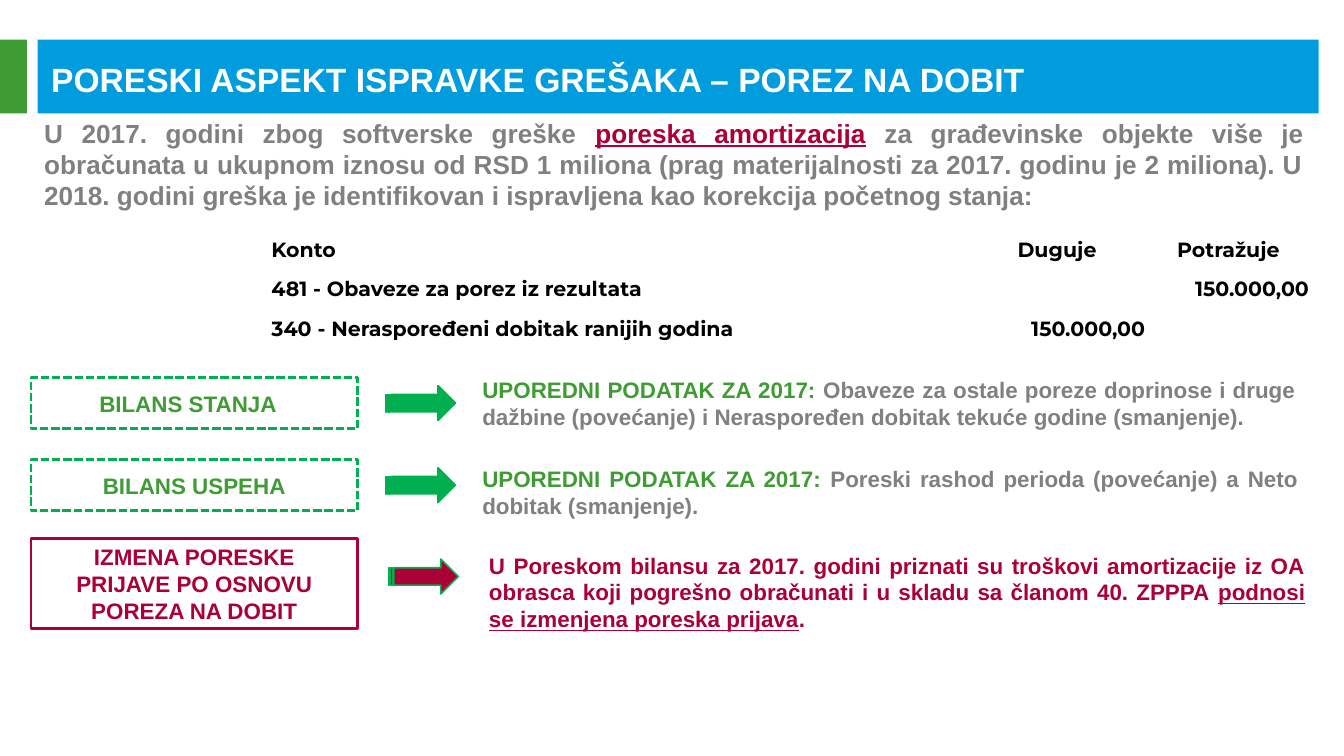
from dataclasses import dataclass
from typing import NamedTuple

from pptx import Presentation
from pptx.dml.color import RGBColor
from pptx.enum.dml import MSO_LINE
from pptx.enum.shapes import MSO_SHAPE
from pptx.enum.text import MSO_ANCHOR, MSO_AUTO_SIZE, PP_ALIGN
from pptx.slide import Slide
from pptx.text.text import TextFrame, _Paragraph
from pptx.util import Pt

BLUE = RGBColor(0x00, 0x9C, 0xDE)
LEAF = RGBColor(0x3F, 0x9C, 0x35)
GREEN = RGBColor(0x00, 0xB0, 0x50)
CRIMSON = RGBColor(0xAB, 0x00, 0x35)
GRAY = RGBColor(0x80, 0x80, 0x80)
WHITE = RGBColor(0xFF, 0xFF, 0xFF)
BLACK = RGBColor(0x00, 0x00, 0x00)


class Box(NamedTuple):
    left: float
    top: float
    width: float
    height: float


class Segment(NamedTuple):
    text: str
    color: RGBColor
    underline: bool = False


@dataclass
class Effect:
    label: str
    color: RGBColor
    outline: RGBColor
    dashed: bool
    label_box: Box
    arrow_box: Box
    detail_box: Box
    detail: list[Segment]
    label_right_inset: float = 7.2


COMPARATIVE = Segment("UPOREDNI PODATAK ZA 2017: ", LEAF)
INTRO = [
    Segment("U 2017. godini zbog softverske greške ", GRAY),
    Segment("poreska amortizacija", CRIMSON, True),
    Segment(" za građevinske objekte više je obračunata u ukupnom iznosu od RSD 1 miliona "
            "(prag materijalnosti za 2017. godinu je 2 miliona). U 2018. godini greška je "
            "identifikovan i ispravljena kao korekcija početnog stanja:", GRAY),
]
EFFECTS = [
    Effect("BILANS STANJA", LEAF, GREEN, True,
           Box(16.6, 202.3, 175, 27.4), Box(206.6, 206.6, 37.4, 18.7),
           Box(251.3, 194.4, 450, 43.2),
           [COMPARATIVE,
            Segment("Obaveze za ostale poreze doprinose i druge dažbine (povećanje) i "
                    "Neraspoređen dobitak tekuće godine (smanjenje).", GRAY)], 13.8),
    Effect("BILANS USPEHA", LEAF, GREEN, True,
           Box(16.6, 246.2, 175, 27.4), Box(206.6, 250.6, 37.4, 18.7),
           Box(251.3, 241.5, 451.4, 43.9),
           [COMPARATIVE,
            Segment("Poreski rashod perioda (povećanje) a Neto dobitak (smanjenje).", GRAY)]),
    Effect("IZMENA PORESKE PRIJAVE PO OSNOVU POREZA NA DOBIT", CRIMSON, CRIMSON, False,
           Box(16.6, 288.7, 175, 48.2), Box(208.1, 299.5, 37.4, 18.7),
           Box(254.9, 285.1, 451.4, 64.1),
           [Segment("U Poreskom bilansu za 2017. godini priznati su troškovi amortizacije iz OA "
                    "obrasca koji pogrešno obračunati i u skladu sa članom 40. ZPPPA ", CRIMSON),
            Segment("podnosi se izmenjena poreska prijava", CRIMSON, True),
            Segment(".", CRIMSON)]),
]
ENTRIES = [
    ("Konto", "Duguje", "Potražuje"),
    ("481 - Obaveze za porez iz rezultata", "", "150.000,00"),
    ("340 - Neraspoređeni dobitak ranijih godina", "150.000,00", ""),
]
COLUMN_WIDTHS = (373.7, 95.8, 87.8)
ROW_HEIGHT = 21.1


def lengths(box: Box) -> list[Pt]:
    return [Pt(value) for value in box]


def add_run(paragraph: _Paragraph, segment: Segment, size: float, font_name: str = "Arial") -> None:
    run = paragraph.add_run()
    run.text = segment.text
    font = run.font
    font.name, font.size, font.bold = font_name, Pt(size), True
    font.color.rgb = segment.color
    if segment.underline:
        font.underline = True


def write(frame: TextFrame, segments: list[Segment], size: float, alignment: PP_ALIGN) -> None:
    frame.word_wrap = True
    frame.auto_size = MSO_AUTO_SIZE.NONE
    frame.vertical_anchor = MSO_ANCHOR.MIDDLE
    paragraph = frame.paragraphs[0]
    paragraph.alignment = alignment
    for segment in segments:
        add_run(paragraph, segment, size)


def add_figure(slide: Slide, kind: MSO_SHAPE, box: Box, fill: RGBColor | None = None,
               outline: RGBColor | None = None, line_width: float = 1.5):
    shape = slide.shapes.add_shape(kind, *lengths(box))
    shape.shadow.inherit = False
    if fill is None:
        shape.fill.background()
    else:
        shape.fill.solid()
        shape.fill.fore_color.rgb = fill
    if outline is None:
        shape.line.fill.background()
    else:
        shape.line.color.rgb = outline
        shape.line.width = Pt(line_width)
    return shape


def add_text(slide: Slide, box: Box, segments: list[Segment], size: float) -> None:
    text_box = slide.shapes.add_textbox(*lengths(box))
    write(text_box.text_frame, segments, size, PP_ALIGN.JUSTIFY)


def add_header(slide: Slide) -> None:
    add_figure(slide, MSO_SHAPE.RECTANGLE, Box(20.2, 21.2, 686.2, 39.6), BLUE)
    add_figure(slide, MSO_SHAPE.RECTANGLE, Box(0, 21.2, 14.4, 39.6), LEAF)
    title = slide.shapes.title
    title.left, title.top, title.width, title.height = lengths(Box(20.2, 21.6, 694.8, 41.8))
    heading = Segment("PORESKI ASPEKT ISPRAVKE GREŠAKA – POREZ NA DOBIT", WHITE)
    write(title.text_frame, [heading], 18, PP_ALIGN.LEFT)
    title.element.getparent().append(title.element)


def add_entries(slide: Slide) -> None:
    box = Box(144.7, 119.5, sum(COLUMN_WIDTHS), ROW_HEIGHT * len(ENTRIES))
    table = slide.shapes.add_table(len(ENTRIES), len(COLUMN_WIDTHS), *lengths(box)).table
    table.first_row = table.horz_banding = False
    for column, width in zip(table.columns, COLUMN_WIDTHS):
        column.width = Pt(width)
    for row_index, entry in enumerate(ENTRIES):
        table.rows[row_index].height = Pt(ROW_HEIGHT)
        for column_index, text in enumerate(entry):
            cell = table.cell(row_index, column_index)
            cell.fill.background()
            cell.vertical_anchor = MSO_ANCHOR.BOTTOM
            cell.margin_left = cell.margin_right = cell.margin_top = Pt(0.7)
            cell.margin_bottom = Pt(0)
            paragraph = cell.text_frame.paragraphs[0]
            if column_index:
                paragraph.alignment = PP_ALIGN.RIGHT if row_index else PP_ALIGN.CENTER
            add_run(paragraph, Segment(text, BLACK), 11, "Montserrat")


def add_effect(slide: Slide, effect: Effect) -> None:
    label = add_figure(slide, MSO_SHAPE.RECTANGLE, effect.label_box, outline=effect.outline)
    if effect.dashed:
        label.line.dash_style = MSO_LINE.SQUARE_DOT
    label.text_frame.margin_right = Pt(effect.label_right_inset)
    write(label.text_frame, [Segment(effect.label, effect.color)], 12, PP_ALIGN.CENTER)
    add_figure(slide, MSO_SHAPE.STRIPED_RIGHT_ARROW, effect.arrow_box, effect.outline, GREEN, 0.85)
    add_text(slide, effect.detail_box, effect.detail, 12)


def main() -> None:
    presentation = Presentation()
    presentation.slide_width, presentation.slide_height = Pt(720), Pt(405)
    slide = presentation.slides.add_slide(presentation.slide_layouts[5])
    add_header(slide)
    add_text(slide, Box(16.6, 67, 689, 41.8), INTRO, 14)
    for effect in EFFECTS:
        add_effect(slide, effect)
    add_entries(slide)
    presentation.save("out.pptx")


if __name__ == "__main__":
    main()
